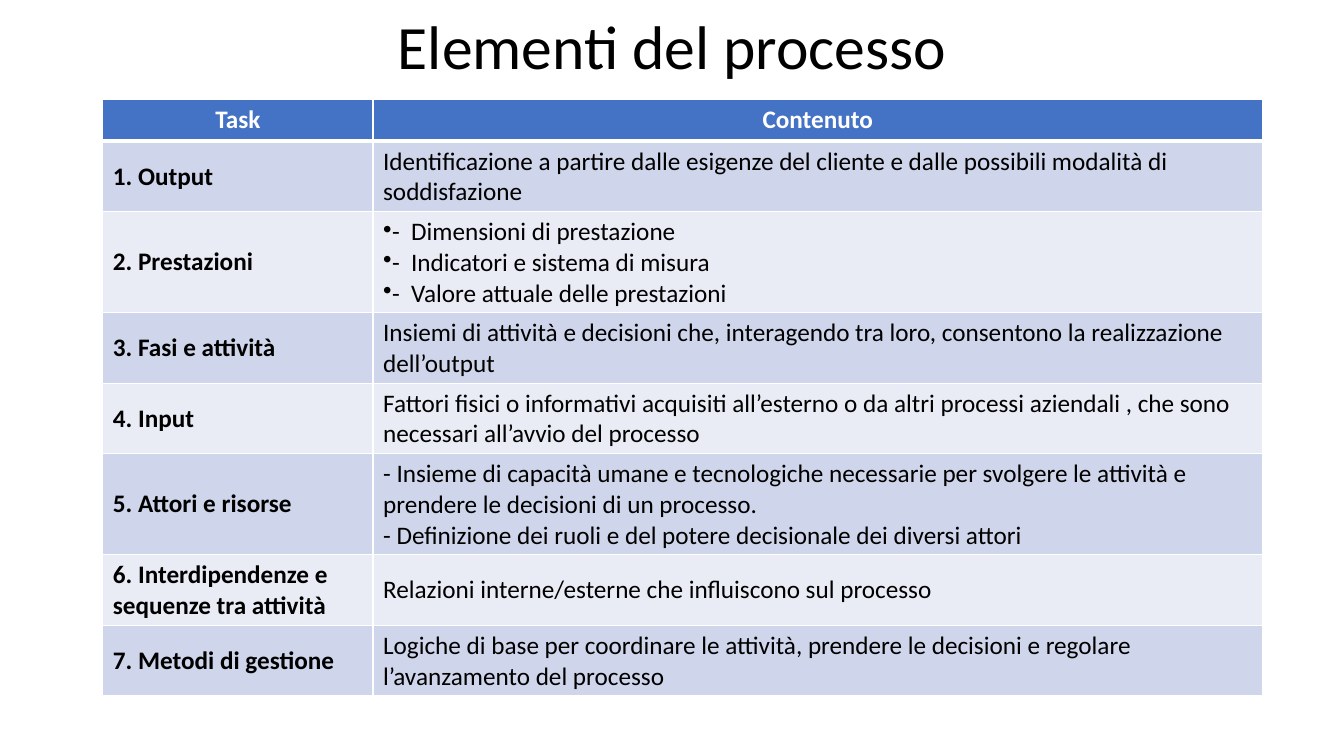
import pptx
import pptx.dml.color
import pptx.enum.text
import pptx.oxml.ns
import pptx.util
from lxml import etree

Inches, Pt = pptx.util.Inches, pptx.util.Pt
ALIGN, ANCHOR = pptx.enum.text.PP_ALIGN, pptx.enum.text.MSO_ANCHOR

COLOURS = {
    "text": "000000",
    "white": "FFFFFF",
    "header": "4472C4",
    "odd": "CFD5EA",
    "even": "E9EBF5",
}
FONT = "Calibri"
SLIDE_WIDTH, SLIDE_HEIGHT = 13.33, 7.5
CONTENT_WIDTH = 11.5
COLUMN_WIDTHS = (2.68, 8.82)
ROW_HEIGHT = 0.41

HEADINGS = ("Task", "Contenuto")
# A list becomes bulleted paragraphs; a line feed is a break within a paragraph.
TASKS = [
    ("1. Output",
     "Identificazione a partire dalle esigenze del cliente e dalle possibili "
     "modalità di soddisfazione"),
    ("2. Prestazioni",
     ["-  Dimensioni di prestazione",
      "-  Indicatori e sistema di misura",
      "-  Valore attuale delle prestazioni"]),
    ("3. Fasi e attività",
     "Insiemi di attività e decisioni che, interagendo tra loro, consentono la "
     "realizzazione dell’output"),
    ("4. Input",
     "Fattori fisici o informativi acquisiti all’esterno o da altri processi "
     "aziendali , che sono necessari all’avvio del processo"),
    ("5. Attori e risorse",
     "- Insieme di capacità umane e tecnologiche necessarie per svolgere le "
     "attività e prendere le decisioni di un processo.\n"
     "- Definizione dei ruoli e del potere decisionale dei diversi attori"),
    ("6. Interdipendenze e sequenze tra attività",
     "Relazioni interne/esterne che influiscono sul processo"),
    ("7. Metodi di gestione",
     "Logiche di base per coordinare le attività, prendere le decisioni e "
     "regolare l’avanzamento del processo"),
]


def rgb(name):
    return pptx.dml.color.RGBColor.from_string(COLOURS[name])


def sub(parent, tag, **attributes):
    return etree.SubElement(parent, pptx.oxml.ns.qn(tag), **attributes)


def write(paragraph, text, size, colour="text", bold=False, align=ALIGN.LEFT):
    paragraph.alignment = align
    for number, line in enumerate(text.split("\n")):
        if number:
            paragraph.add_line_break()
        run = paragraph.add_run()
        run.text = line
        run.font.name = FONT
        run.font.size = Pt(size)
        run.font.bold = bold
        run.font.color.rgb = rgb(colour)


def add_bullet(paragraph):
    properties = paragraph._p.get_or_add_pPr()
    properties.set("marL", "0")
    properties.set("indent", "0")
    sub(properties, "a:buChar", char="•")


def set_borders(cell, top=1, bottom=1):
    """Draw white borders, with widths in points; call before filling the cell."""
    properties = cell._tc.get_or_add_tcPr()
    for side, width in (("L", 1), ("R", 1), ("T", top), ("B", bottom)):
        line = sub(properties, f"a:ln{side}", w=str(Pt(width)))
        sub(sub(line, "a:solidFill"), "a:srgbClr", val=COLOURS["white"])


def fill_cell(cell, content, fill, anchor=ANCHOR.MIDDLE, **text_style):
    cell.fill.solid()
    cell.fill.fore_color.rgb = rgb(fill)
    cell.vertical_anchor = anchor
    bulleted = isinstance(content, list)
    for number, text in enumerate(content if bulleted else [content]):
        frame = cell.text_frame
        paragraph = frame.add_paragraph() if number else frame.paragraphs[0]
        if bulleted:
            add_bullet(paragraph)
        write(paragraph, text, 18, **text_style)


def add_title(slide, text):
    box = slide.shapes.add_textbox(
        Inches(0.92), 0, Inches(CONTENT_WIDTH), Inches(0.99))
    frame = box.text_frame
    frame.word_wrap = True
    frame.vertical_anchor = ANCHOR.MIDDLE
    frame.paragraphs[0].line_spacing = 0.9
    write(frame.paragraphs[0], text, 44, align=ALIGN.CENTER)


def add_task_table(slide):
    frame = slide.shapes.add_table(
        len(TASKS) + 1, len(HEADINGS), Inches(1.02), Inches(0.99),
        Inches(CONTENT_WIDTH), Inches(5.91))
    table = frame.table
    for column, width in zip(table.columns, COLUMN_WIDTHS):
        column.width = Inches(width)
    for row in table.rows:
        row.height = Inches(ROW_HEIGHT)
    frame.height = Inches(5.91)

    for column, heading in enumerate(HEADINGS):
        cell = table.cell(0, column)
        set_borders(cell, bottom=3)
        fill_cell(cell, heading, "header", anchor=ANCHOR.TOP,
                  colour="white", bold=True, align=ALIGN.CENTER)
    for row, task in enumerate(TASKS, start=1):
        for column, content in enumerate(task):
            cell = table.cell(row, column)
            set_borders(cell, top=3 if row == 1 else 1)
            fill_cell(cell, content, "odd" if row % 2 else "even",
                      bold=column == 0)


def main():
    presentation = pptx.Presentation()
    presentation.slide_width = Inches(SLIDE_WIDTH)
    presentation.slide_height = Inches(SLIDE_HEIGHT)
    slide = presentation.slides.add_slide(presentation.slide_layouts[6])
    add_title(slide, "Elementi del processo")
    add_task_table(slide)
    presentation.save("out.pptx")


if __name__ == "__main__":
    main()
